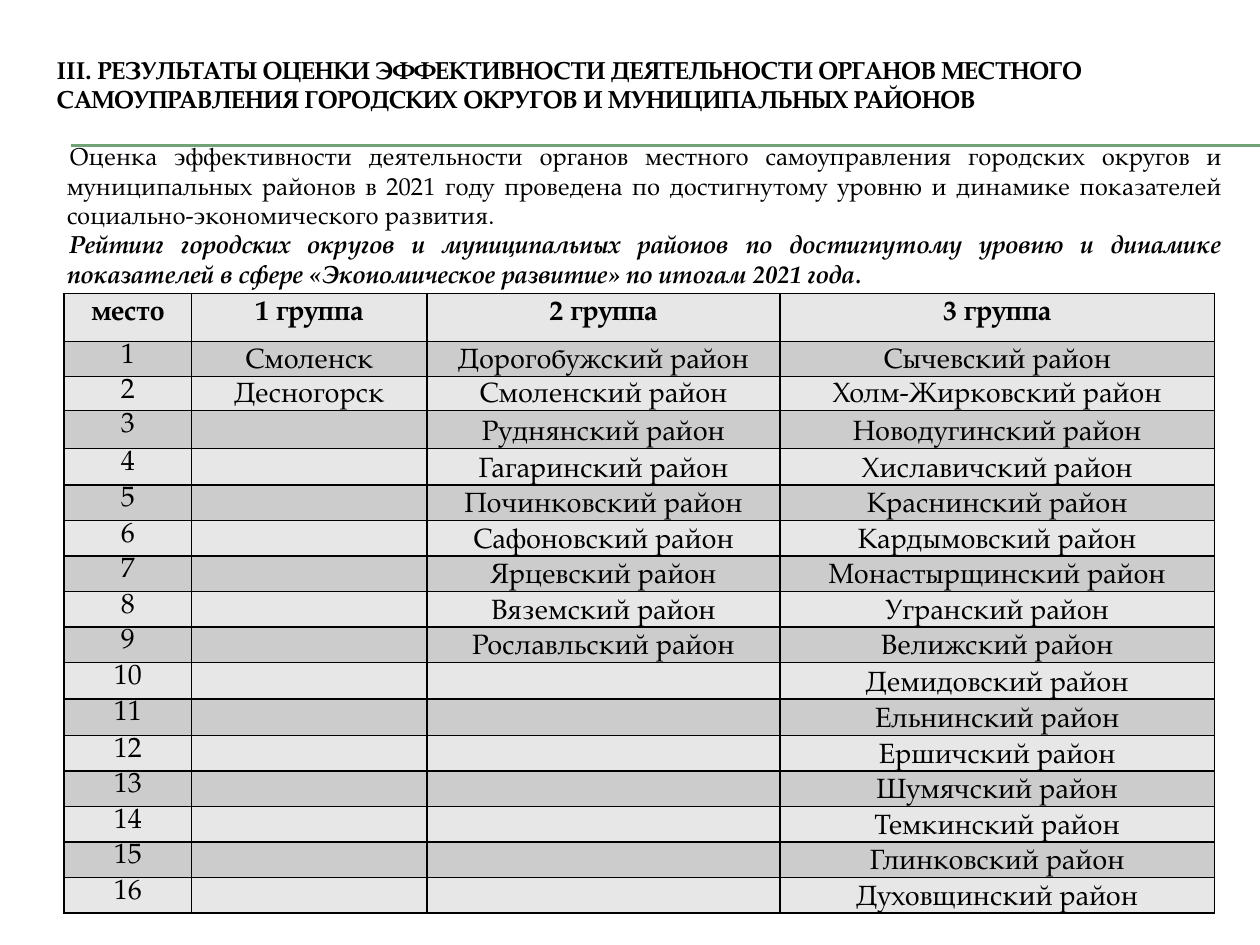
from itertools import zip_longest

from lxml import etree
from pptx import Presentation
from pptx import util as u
from pptx.dml.color import RGBColor
from pptx.enum import shapes, text
from pptx.oxml.ns import qn

FACE = "TeX Gyre Pagella"
TITLE = ("III. РЕЗУЛЬТАТЫ ОЦЕНКИ ЭФФЕКТИВНОСТИ ДЕЯТЕЛЬНОСТИ ОРГАНОВ МЕСТНОГО "
         "САМОУПРАВЛЕНИЯ ГОРОДСКИХ ОКРУГОВ И МУНИЦИПАЛЬНЫХ РАЙОНОВ")
INTRO = ("Оценка эффективности деятельности органов местного самоуправления городских "
         "округов и муниципальных районов в 2021 году проведена по достигнутому уровню "
         "и динамике показателей социально-экономического развития.")
RATING = ("Рейтинг городских округов и муниципальных районов по достигнутому уровню и "
          "динамике показателей в сфере «Экономическое развитие» по итогам 2021 года.")
HEADS = ["место", "1 группа", "2 группа", "3 группа"]
CITIES = ["Смоленск", "Десногорск"]
SECOND = ["Дорогобужский", "Смоленский", "Руднянский", "Гагаринский", "Починковский",
          "Сафоновский", "Ярцевский", "Вяземский", "Рославльский"]
THIRD = ["Сычевский", "Холм-Жирковский", "Новодугинский", "Хиславичский", "Краснинский",
         "Кардымовский", "Монастырщинский", "Угранский", "Велижский", "Демидовский",
         "Ельнинский", "Ершичский", "Шумячский", "Темкинский", "Глинковский",
         "Духовщинский"]
WIDTHS = [1.01, 1.87, 2.8, 3.45]
TALL = {0: 0.38, 1: 0.28, 3: 0.3, 4: 0.29, 10: 0.29, 11: 0.29}


def color(code):
    """Turn a hex string into a colour."""
    return RGBColor.from_string(code)


def style(para, size, align, bold=False, slant=False):
    """Format a paragraph and its runs."""
    para.alignment = align
    para.line_spacing = 1.0
    para.space_before = para.space_after = u.Pt(0)
    for run in para.runs:
        font = run.font
        font.name, font.size = FACE, u.Pt(size)
        font.bold, font.italic = bold, slant
        font.color.rgb = color("000000")


def place(shape, left, top, width, height):
    """Move and size a placeholder."""
    shape.left, shape.top = u.Inches(left), u.Inches(top)
    shape.width, shape.height = u.Inches(width), u.Inches(height)
    shape.text_frame.word_wrap = True
    shape.text_frame.auto_size = text.MSO_AUTO_SIZE.NONE


def add_title(slide):
    """Fill the title placeholder."""
    title = slide.shapes.title
    place(title, 0.35, 0.21, 9.5, 0.92)
    frame = title.text_frame
    frame.vertical_anchor = text.MSO_ANCHOR.MIDDLE
    frame.text = TITLE
    style(frame.paragraphs[0], 14, text.PP_ALIGN.LEFT, True)


def add_body(slide):
    """Fill the body placeholder with the two justified paragraphs."""
    body = slide.placeholders[1]
    place(body, 0.43, 1.07, 9.37, 1.26)
    frame = body.text_frame
    frame.text = INTRO + "\n" + RATING
    for para, strong in zip(frame.paragraphs, (False, True)):
        props = para._p.get_or_add_pPr()
        props.set("marL", "0")
        props.set("indent", str(u.Inches(0.02)))
        etree.SubElement(props, qn("a:buNone"))
        style(para, 14, text.PP_ALIGN.JUSTIFY, strong, strong)


def add_rule(slide, top):
    """Draw a thin green line to the right edge."""
    rule = slide.shapes.add_connector(
        shapes.MSO_CONNECTOR.STRAIGHT,
        u.Inches(0.56), u.Inches(top), u.Inches(10), u.Inches(top))
    rule.line.color.rgb = color("72A376")
    rule.line.width = u.Pt(0.75)
    etree.SubElement(rule._element.spPr, qn("a:effectLst"))


def add_edges(cell):
    """Give a cell black borders on all sides."""
    props = cell._tc.get_or_add_tcPr()
    for side in "LRTB":
        line = etree.SubElement(props, qn("a:ln" + side), w=str(u.Pt(1)))
        fill = etree.SubElement(line, qn("a:solidFill"))
        etree.SubElement(fill, qn("a:srgbClr"), val="000000")


def fill_cell(cell, words, row, col):
    """Write and format one table cell."""
    add_edges(cell)
    cell.fill.solid()
    cell.fill.fore_color.rgb = color("CCCCCC" if row % 2 else "E7E7E7")
    para = cell.text_frame.paragraphs[0]
    para.text = words
    style(para, 16, text.PP_ALIGN.CENTER, row == 0)
    if row:
        cell.margin_left = cell.margin_right = cell.margin_top = u.Inches(0.01)
        cell.margin_bottom = 0
        if col:
            cell.vertical_anchor = text.MSO_ANCHOR.BOTTOM
    if not words:
        etree.SubElement(para._p, qn("a:endParaRPr"), sz="1600")


def add_ranks(slide):
    """Build the table of ranks by group."""
    areas = [[name + " район" for name in group] for group in (SECOND, THIRD)]
    ranks = [str(i + 1) for i in range(len(THIRD))]
    rows = [HEADS, *zip_longest(ranks, CITIES, *areas, fillvalue="")]
    table = slide.shapes.add_table(
        len(rows), len(HEADS), u.Inches(0.51), u.Inches(2.33),
        u.Inches(sum(WIDTHS)), u.Inches(4.89)).table
    for col, width in enumerate(WIDTHS):
        table.columns[col].width = u.Inches(width)
    for row, line in enumerate(rows):
        table.rows[row].height = u.Inches(TALL.get(row, 0.27))
        for col, words in enumerate(line):
            fill_cell(table.cell(row, col), words, row, col)


def main():
    """Build and save the slide."""
    deck = Presentation()
    deck.slide_width, deck.slide_height = u.Inches(10), u.Inches(7.5)
    slide = deck.slides.add_slide(deck.slide_layouts[1])
    for top in (1.15, 1.16):
        add_rule(slide, top)
    add_title(slide)
    add_body(slide)
    add_ranks(slide)
    deck.save("out.pptx")


if __name__ == "__main__":
    main()
